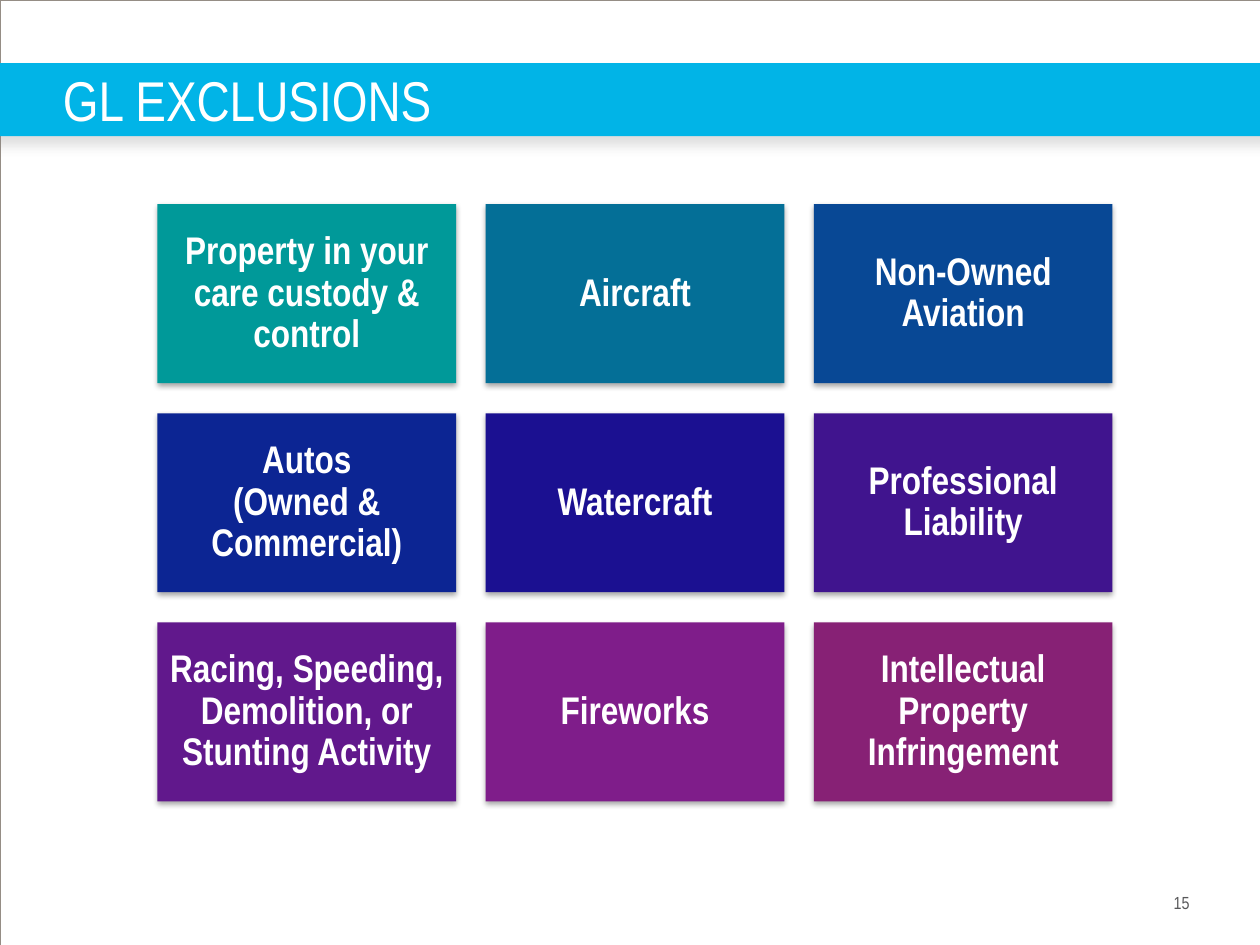
from dataclasses import dataclass

import pptx
import pptx.dml.color
import pptx.enum.shapes
import pptx.enum.text
import pptx.oxml
import pptx.oxml.ns
import pptx.util
from pptx.util import Inches

FONT = "Arial Narrow"
COLORS = {
    "band": "01B4E7",
    "frame": "958D85",
    "white": "FFFFFF",
    "number": "58585A",
    "band_shadow": "808080",
    "tile_shadow": "000000",
}
COLUMNS = 3
TILE_LEFT, TILE_TOP = 1.25, 1.62
TILE_WIDTH, TILE_HEIGHT = 2.37, 1.42
PITCH_X, PITCH_Y = 2.605, 1.66


@dataclass
class Box:
    left: float
    top: float
    width: float
    height: float

    def lengths(self) -> tuple:
        return tuple(Inches(v) for v in (self.left, self.top, self.width, self.height))


@dataclass
class Shadow:
    color: str
    alpha: int
    blur: float
    distance: float


@dataclass
class Tile:
    text: str
    color: str


TILES = [
    Tile("Property in your care custody & control", "009999"),
    Tile("Aircraft", "046F97"),
    Tile("Non-Owned Aviation", "084895"),
    Tile("Autos\v(Owned & Commercial)", "0C2593"),
    Tile("Watercraft", "1B1091"),
    Tile("Professional Liability", "40148E"),
    Tile("Racing, Speeding, Demolition, or Stunting Activity", "61188C"),
    Tile("Fireworks", "7F1D8A"),
    Tile("Intellectual Property Infringement", "872175"),
]
BAND_SHADOW = Shadow(COLORS["band_shadow"], 25, 7, 4.8)
TILE_SHADOW = Shadow(COLORS["tile_shadow"], 35, 3.1, 1.8)


def rgb(color: str) -> pptx.dml.color.RGBColor:
    return pptx.dml.color.RGBColor.from_string(color)


def add_shadow(shape, shadow: Shadow) -> None:
    effects = shape._element.spPr.find(pptx.oxml.ns.qn("a:effectLst"))
    effects.append(pptx.oxml.parse_xml(
        f'<a:outerShdw {pptx.oxml.ns.nsdecls("a")} blurRad="{pptx.util.Pt(shadow.blur)}" '
        f'dist="{pptx.util.Pt(shadow.distance)}" dir="5400000" algn="t" rotWithShape="0">'
        f'<a:srgbClr val="{shadow.color}"><a:alpha val="{shadow.alpha * 1000}"/></a:srgbClr>'
        '</a:outerShdw>'))


def add_rect(s, box: Box, fill: str | None = None, shadow: Shadow | None = None):
    sp = s.shapes.add_shape(pptx.enum.shapes.MSO_SHAPE.RECTANGLE, *box.lengths())
    sp.shadow.inherit = False
    sp.line.fill.background()
    if fill:
        sp.fill.solid()
        sp.fill.fore_color.rgb = rgb(fill)
    else:
        sp.fill.background()
    if shadow:
        add_shadow(sp, shadow)
    return sp


def set_text(sp, text: str, size: int, color: str, align: str = "LEFT",
             inset: float = 0, bold: bool = False):
    tf = sp.text_frame
    tf.text = text
    tf.word_wrap = True
    tf.vertical_anchor = pptx.enum.text.MSO_ANCHOR.MIDDLE
    tf.margin_left = tf.margin_right = Inches(inset)
    tf.margin_top = tf.margin_bottom = Inches(inset)
    p = tf.paragraphs[0]
    p.alignment = getattr(pptx.enum.text.PP_ALIGN, align)
    for r in p.runs:
        r.font.name = FONT
        r.font.size = pptx.util.Pt(size)
        r.font.bold = bold
        r.font.color.rgb = rgb(color)
    return p


def add_tile(s, index: int, tile: Tile) -> None:
    row, column = divmod(index, COLUMNS)
    box = Box(TILE_LEFT + column * PITCH_X, TILE_TOP + row * PITCH_Y,
              TILE_WIDTH, TILE_HEIGHT)
    sp = add_rect(s, box, tile.color, TILE_SHADOW)
    p = set_text(sp, tile.text, 22, COLORS["white"], "CENTER", 0.09, True)
    p.line_spacing = 0.9


def main() -> None:
    prs = pptx.Presentation()
    prs.slide_width, prs.slide_height = Inches(10), Inches(7.5)
    s = prs.slides.add_slide(prs.slide_layouts[6])

    number = s.shapes.add_textbox(*Box(7.75, 7.08, 1.69, 0.17).lengths())
    set_text(number, "15", 10, COLORS["number"], "RIGHT")

    frame = add_rect(s, Box(0, 0, 10, 7.5))
    frame.line.color.rgb = rgb(COLORS["frame"])
    frame.line.width = pptx.util.Pt(0.13)

    add_rect(s, Box(-0.08, 0.5, 10.17, 0.58), COLORS["band"], BAND_SHADOW)
    title = s.shapes.add_textbox(*Box(0.5, 0.5, 6.67, 0.58).lengths())
    set_text(title, "GL EXCLUSIONS", 32, COLORS["white"])

    for index, tile in enumerate(TILES):
        add_tile(s, index, tile)

    prs.save("out.pptx")


if __name__ == "__main__":
    main()
